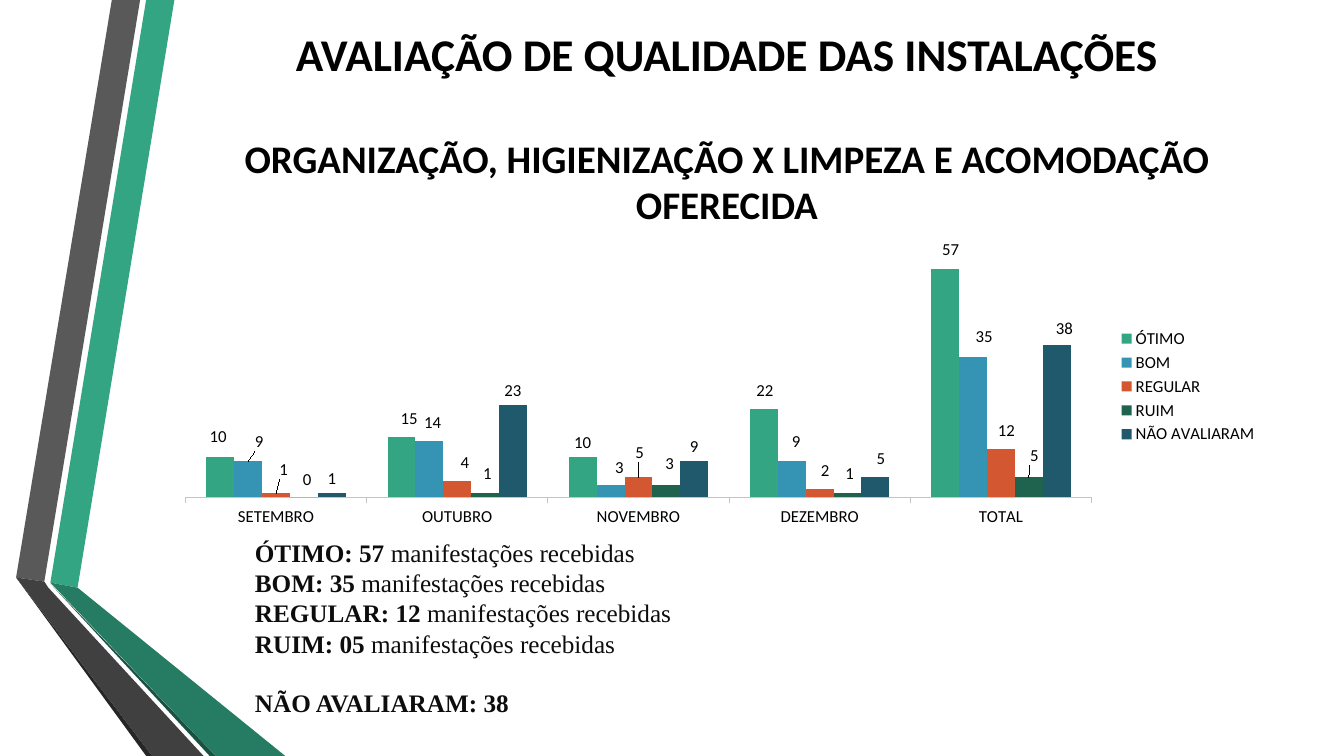
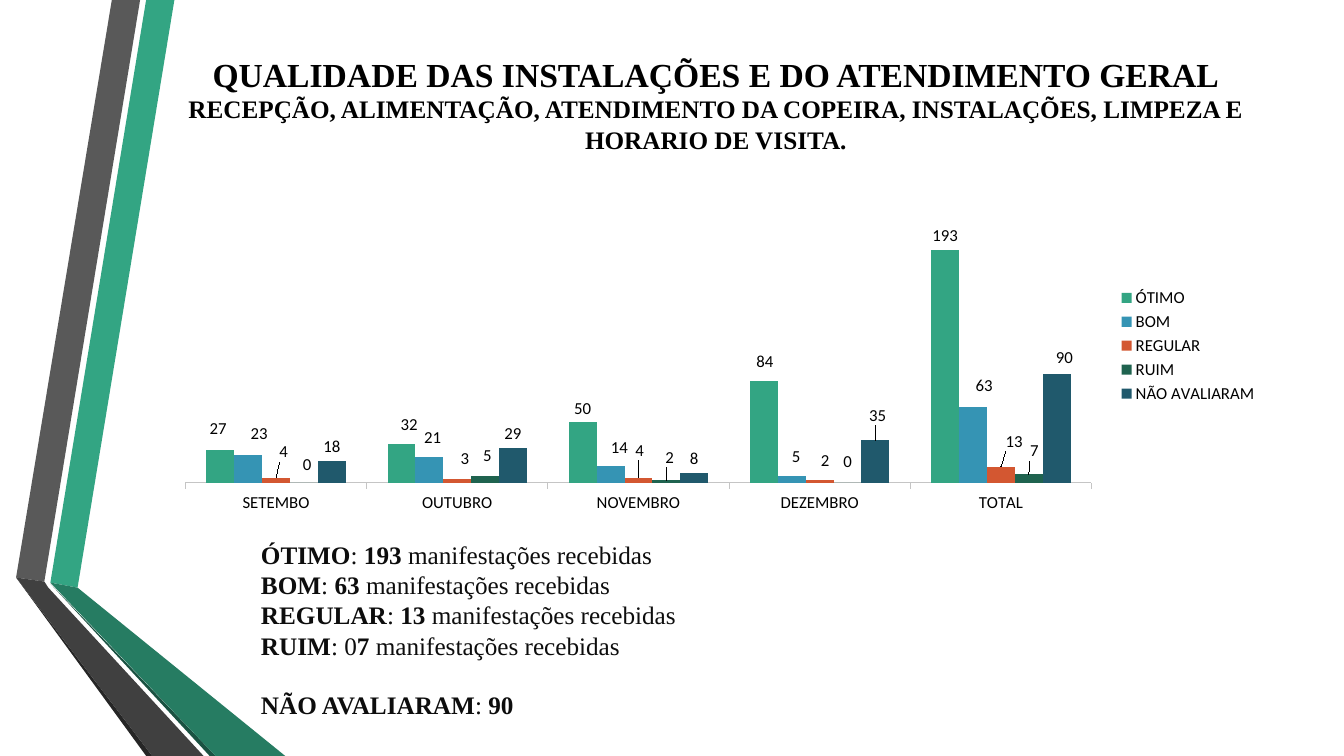
import lxml.etree
import pptx
import pptx.chart.data
import pptx.dml.color
import pptx.enum.chart
import pptx.enum.text
import pptx.oxml.ns
import pptx.util

SLIDE_WIDTH, SLIDE_HEIGHT = 13.33, 7.5
TITLE_ONLY = 5
COLORS = {
    "title": "000000", "body": "0D0D0D", "axis": "C5C5C5",
    "green": "33A583", "gray": "595959", "black": "262626",
    "deep green": "1A5242", "dark green": "267C62", "dark gray": "404040",
}
SERIES_COLORS = {
    "ÓTIMO": "33A583", "BOM": "3594B4", "REGULAR": "D35731",
    "RUIM": "1F634F", "NÃO AVALIARAM": "20596C",
}
CHART_FONT = {"name": "Calibri", "size": 12, "color": COLORS["title"]}
BODY_FONT = {"name": "Times New Roman", "size": 18, "color": COLORS["body"]}
RECEIVED = "manifestações recebidas"

# Ribbon outlines in hundredths of an inch
RIBBONS = [
    ("green", [(50, 578), (77, 583), (173, 0), (145, 0)]),
    ("gray", [(139, 0), (111, 0), (16, 573), (44, 577)]),
    ("black", [(16, 573), (145, 750), (151, 750)]),
    ("deep green", [(50, 579), (208, 750), (214, 750)]),
    ("dark green", [(50, 578), (214, 750), (283, 750), (77, 583)]),
    ("dark gray", [(202, 750), (48, 583), (44, 577), (16, 573), (151, 750)]),
]

# Label shifts by series and category, in percent of the chart's size
LABEL_SHIFTS = {
    "ÓTIMO": [(-0.2, -2.2), (0.7, -1.5), None, (0.1, -1.6), None],
    "BOM": [(1, -2), (0.3, -1.5), (0.8, -1.1), (0.4, -1.7), (1, -2)],
    "REGULAR": [(0.7, -3.4), (0.7, -1.7), (0.1, -3.7), (0.5, -1.5), (0.5, -1.4)],
    "RUIM": [(0.3, -1.2), (0.2, -1.9), (0.3, -2.5), (0.2, -1.8), (0.5, -2.6)],
    "NÃO AVALIARAM": [None, None, None, (0.5, -1.4), (0.7, -0.8)],
}

PAGES = [
    {
        "title_at": (1.73, 0, 10.96, 2.52),
        "title_font": "Calibri",
        "title": [
            ("AVALIAÇÃO DE QUALIDADE DAS INSTALAÇÕES", 32.4, 0),
            ("ORGANIZAÇÃO, HIGIENIZAÇÃO X LIMPEZA E ACOMODAÇÃO OFERECIDA", 27.9, 38),
        ],
        "summary_at": (2.43, 5.28, 10.25, 2.22),
        "summary": [
            ("ÓTIMO: 57 ", RECEIVED),
            ("BOM: 35 ", RECEIVED),
            ("REGULAR: 12 ", RECEIVED),
            ("RUIM: 05 ", RECEIVED),
            ("NÃO AVALIARAM: 38",),
        ],
        "chart_at": (1.62, 2.38, 10.96, 2.9),
        "plot_at": {"x": 0.02, "y": 0.055, "w": 0.82, "h": 0.825},
        "maximum": 60,
        "months": ["SETEMBRO", "OUTUBRO", "NOVEMBRO", "DEZEMBRO", "TOTAL"],
        "values": [
            (10, 15, 10, 22, 57), (9, 14, 3, 9, 35), (1, 4, 5, 2, 12),
            (0, 1, 3, 1, 5), (1, 23, 9, 5, 38),
        ],
        "shifts": {("ÓTIMO", 4): (0.5, -1.7)},
    },
    {
        "title_at": (1.62, 0.1, 10.96, 1.86),
        "title_font": "Times New Roman",
        "title": [
            ("QUALIDADE DAS INSTALAÇÕES E DO ATENDIMENTO GERAL", 24, 0),
            ("RECEPÇÃO, ALIMENTAÇÃO, ATENDIMENTO DA COPEIRA, INSTALAÇÕES, "
             "LIMPEZA E HORARIO DE VISITA.", 18, 0),
        ],
        "summary_at": (2.49, 5.3, 10.09, 1.92),
        "summary": [
            ("ÓTIMO", ": ", "193 ", RECEIVED),
            ("BOM", ": ", "63 ", RECEIVED),
            ("REGULAR", ": ", "13 ", RECEIVED),
            ("RUIM", ": 0", "7 ", RECEIVED),
            ("NÃO AVALIARAM", ": ", "90"),
        ],
        "chart_at": (1.62, 1.71, 10.96, 3.44),
        "plot_at": {"x": 0.02, "y": 0.025, "w": 0.82, "h": 0.87},
        "maximum": 250,
        "months": ["SETEMBO", "OUTUBRO", "NOVEMBRO", "DEZEMBRO", "TOTAL"],
        "values": [
            (27, 32, 50, 84, 193), (23, 21, 14, 5, 63), (4, 3, 4, 2, 13),
            (0, 5, 2, 0, 7), (18, 29, 8, 35, 90),
        ],
        "shifts": {("REGULAR", 4): (1.2, -3.2), ("RUIM", 3): (0, -2),
                   ("NÃO AVALIARAM", 3): (0.2, -3.2)},
    },
]


def rgb(value):
    return pptx.dml.color.RGBColor.from_string(value)


def inches(lengths):
    return [pptx.util.Inches(length) for length in lengths]


def set_attributes(target, values):
    for name, value in values.items():
        setattr(target, name, value)


def set_font(font, name, size, color, bold=False):
    set_attributes(font, {"name": name, "size": pptx.util.Pt(size), "bold": bold})
    font.color.rgb = rgb(color)


def add_ribbons(page):
    """Draw the ribbons and move them behind everything on the page's layout."""
    tree = page.slide_layout.shapes.element
    for index, (color, points) in enumerate(RIBBONS):
        builder = page.shapes.build_freeform(*points[0], scale=9144)
        builder.add_line_segments(points[1:], close=True)
        ribbon = builder.convert_to_shape()
        ribbon.shadow.inherit = False
        ribbon.fill.solid()
        ribbon.fill.fore_color.rgb = rgb(COLORS[color])
        ribbon.line.fill.background()
        tree.insert(2 + index, ribbon.element)


def next_paragraph(frame, index):
    return frame.add_paragraph() if index else frame.paragraphs[0]


def fill_title(page, content):
    title = page.shapes.title
    places = ("left", "top", "width", "height")
    set_attributes(title, dict(zip(places, inches(content["title_at"]))))
    frame = title.text_frame
    set_attributes(frame, {
        "word_wrap": True,
        "auto_size": pptx.enum.text.MSO_AUTO_SIZE.NONE,
        "vertical_anchor": pptx.enum.text.MSO_ANCHOR.MIDDLE,
    })
    for index, (text, size, gap) in enumerate(content["title"]):
        para = next_paragraph(frame, index)
        set_attributes(para, {"alignment": pptx.enum.text.PP_ALIGN.CENTER,
                              "space_before": pptx.util.Pt(gap)})
        span = para.add_run()
        span.text = text
        set_font(span.font, content["title_font"], size, COLORS["title"], True)


def add_summary(page, content):
    """Write the counts; the parts of a line alternate bold and regular."""
    frame = page.shapes.add_textbox(*inches(content["summary_at"])).text_frame
    frame.word_wrap = True
    for index, parts in enumerate(content["summary"]):
        para = next_paragraph(frame, index)
        for position, text in enumerate(parts):
            span = para.add_run()
            span.text = text
            set_font(span.font, **BODY_FONT, bold=position % 2 == 0)
    para.space_before = pptx.util.Pt(21)


def manual_layout(**values):
    qn = pptx.oxml.ns.qn
    layout = lxml.etree.Element(qn("c:layout"))
    manual = lxml.etree.SubElement(layout, qn("c:manualLayout"))
    for name, value in values.items():
        lxml.etree.SubElement(manual, qn(f"c:{name}")).set("val", str(value))
    return layout


def place_plot(chart, place):
    qn = pptx.oxml.ns.qn
    area = chart.element.find(".//" + qn("c:plotArea"))
    for layout in area.findall(qn("c:layout")):
        area.remove(layout)
    area.insert(0, manual_layout(layoutTarget="inner", xMode="edge", yMode="edge", **place))


def label_bars(chart, overrides):
    outside = pptx.enum.chart.XL_LABEL_POSITION.OUTSIDE_END
    used_shifts = []
    for series in chart.plots[0].series:
        series.format.fill.solid()
        series.format.fill.fore_color.rgb = rgb(SERIES_COLORS[series.name])
        series.invert_if_negative = False
        set_attributes(series.data_labels, {"show_value": True, "position": outside})
        set_font(series.data_labels.font, **CHART_FONT)
        for index, usual in enumerate(LABEL_SHIFTS[series.name]):
            shift = overrides.get((series.name, index), usual)
            if shift:
                label = series.points[index].data_label
                label.position = outside
                set_font(label.font, **CHART_FONT)
                used_shifts.append(shift)
    labels = chart.element.iter(pptx.oxml.ns.qn("c:dLbl"))
    for label, (across, down) in zip(list(labels), used_shifts):
        label.insert(1, manual_layout(x=across / 100, y=down / 100))


def add_ratings_chart(page, content):
    data = pptx.chart.data.CategoryChartData()
    data.categories = content["months"]
    for name, values in zip(SERIES_COLORS, content["values"]):
        data.add_series(name, values)
    kind = pptx.enum.chart.XL_CHART_TYPE.COLUMN_CLUSTERED
    chart = page.shapes.add_chart(kind, *inches(content["chart_at"]), data).chart
    set_attributes(chart, {"has_title": False, "has_legend": True})
    set_attributes(chart.legend, {
        "position": pptx.enum.chart.XL_LEGEND_POSITION.RIGHT,
        "include_in_layout": False,
    })
    set_attributes(chart.plots[0], {"gap_width": 150, "overlap": 0,
                                    "vary_by_categories": False})
    set_attributes(chart.value_axis, {
        "visible": False, "has_major_gridlines": False,
        "minimum_scale": 0, "maximum_scale": content["maximum"],
    })
    axis = chart.category_axis
    axis.major_tick_mark = pptx.enum.chart.XL_TICK_MARK.OUTSIDE
    axis.format.line.color.rgb = rgb(COLORS["axis"])
    axis.format.line.width = pptx.util.Pt(0.75)
    for font in (chart.font, chart.legend.font, axis.tick_labels.font):
        set_font(font, **CHART_FONT)
    place_plot(chart, content["plot_at"])
    label_bars(chart, content["shifts"])


def main():
    deck = pptx.Presentation()
    deck.slide_width, deck.slide_height = inches((SLIDE_WIDTH, SLIDE_HEIGHT))
    for index, content in enumerate(PAGES):
        page = deck.slides.add_slide(deck.slide_layouts[TITLE_ONLY])
        if index == 0:
            add_ribbons(page)
        fill_title(page, content)
        add_summary(page, content)
        add_ratings_chart(page, content)
    deck.save("out.pptx")


if __name__ == "__main__":
    main()
